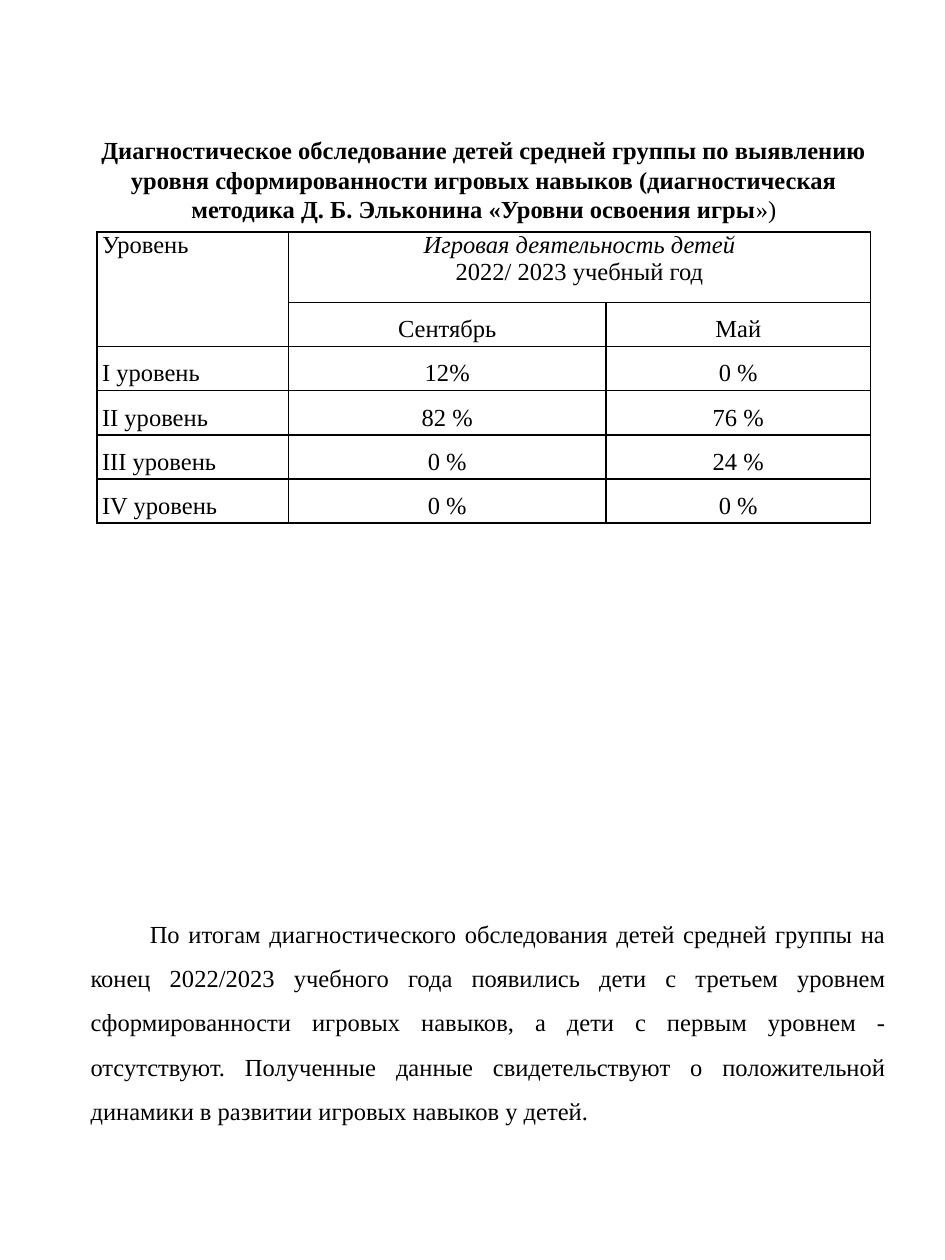
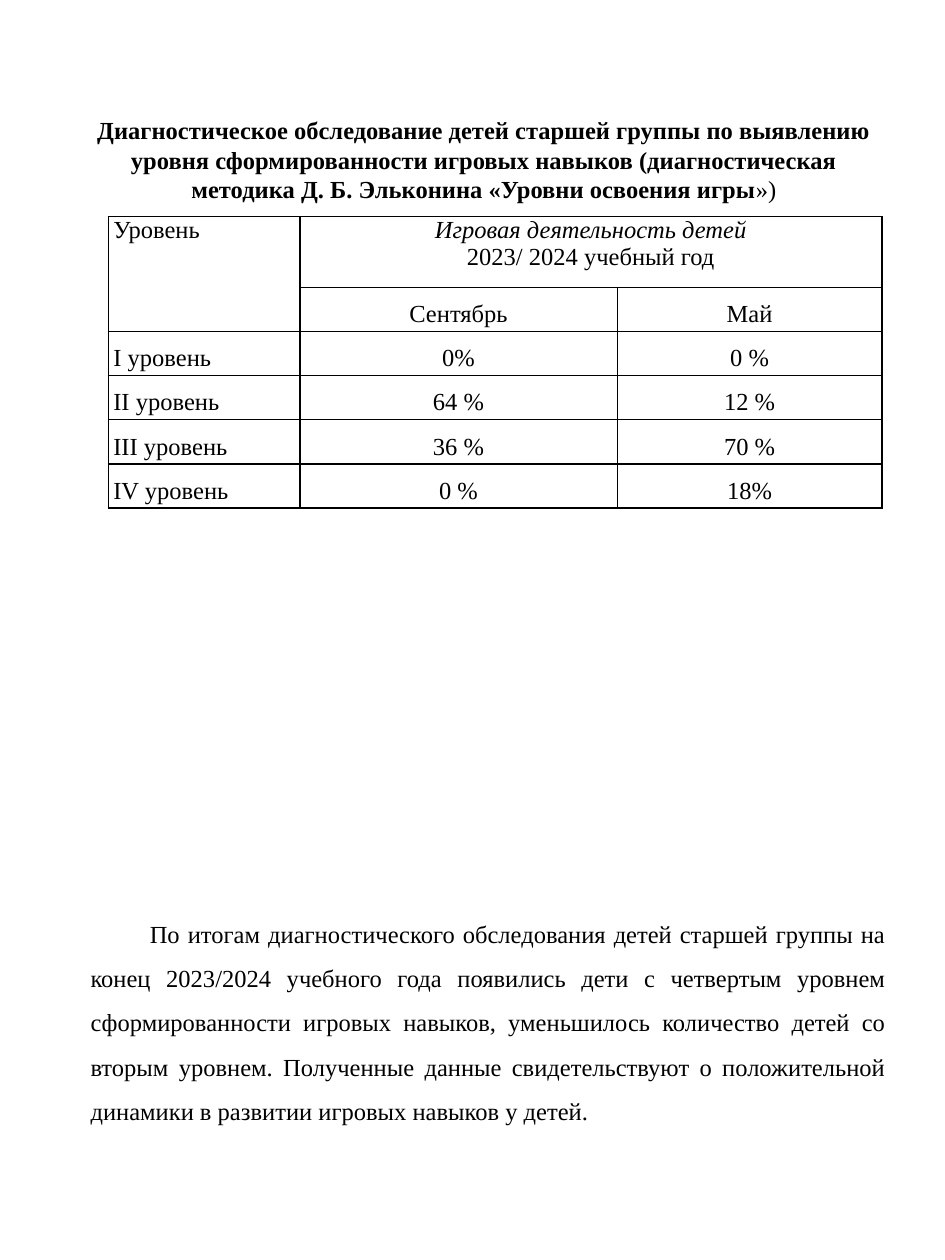
from dataclasses import dataclass

from lxml.etree import SubElement
from pptx import Presentation
from pptx.dml.color import RGBColor
from pptx.enum.text import MSO_ANCHOR as Anchor, MSO_AUTO_SIZE as AutoSize, PP_ALIGN as Align
from pptx.oxml import parse_xml
from pptx.oxml.ns import nsdecls, qn
from pptx.util import Inches, Pt


@dataclass(frozen=True)
class Theme:
    font: str = "Times New Roman"
    size: int = 14
    ink: str = "000000"
    border: int = 1
    loose: float = 1.5
    cell_inset: float = 0.04
    first_line: float = 0.47


THEME = Theme()

# Content
LEVELS = ("I уровень", "II уровень", "III уровень", "IV уровень")
MONTHS = ("Сентябрь", "Май")
TITLE = (
    "Диагностическое обследование детей {group} группы по выявлению уровня "
    "сформированности игровых навыков (диагностическая методика "
    "Д. Б. Эльконина «Уровни освоения игры"
)
SUMMARY = (
    "По итогам диагностического обследования детей {group} группы на конец "
    "{start}/{end} учебного года появились дети с {change}. Полученные данные "
    "свидетельствуют о положительной динамики в развитии игровых навыков у детей."
)
SURVEYS = [
    dict(
        group="средней", start=2022, end=2023,
        change="третьем уровнем сформированности игровых навыков, "
               "а дети с первым уровнем - отсутствуют",
        results=[("12%", "0 %"), ("82 %", "76 %"), ("0 %", "24 %"), ("0 %", "0 %")],
        title_top=1.02, table_at=(0.77, 1.84),
    ),
    dict(
        group="старшей", start=2023, end=2024,
        change="четвертым уровнем сформированности игровых навыков, "
               "уменьшилось количество детей со вторым уровнем",
        results=[("0%", "0 %"), ("64 %", "12 %"), ("36 %", "70 %"), ("0 %", "18%")],
        title_top=0.86, table_at=(0.86, 1.72),
    ),
]

# Layout, in inches
SLIDE_SIZE = (7.5, 10)
TITLE_LEFT, TITLE_SIZE = 0.55, (6.58, 0.81)
SUMMARY_BOX = (0.62, 7.13, 6.51, 1.87)
COLUMNS = (1.52, 2.52, 2.1)
HEADER_HEIGHT, ROW_HEIGHT = 0.56, 0.35


def write(paragraph, text, align=Align.LEFT, bold=False, italic=False,
          spacing=None, first_line=0):
    """Add one formatted run to a paragraph."""
    paragraph.alignment = align
    if spacing:
        paragraph.line_spacing = spacing
    if first_line:
        paragraph._p.get_or_add_pPr().set("indent", str(Inches(first_line)))
    run = paragraph.add_run()
    run.text = text
    font = run.font
    font.name, font.size = THEME.font, Pt(THEME.size)
    font.bold, font.italic = bold, italic
    font.color.rgb = RGBColor.from_string(THEME.ink)


def add_text_frame(slide, box, anchor=Anchor.TOP):
    frame = slide.shapes.add_textbox(*map(Inches, box)).text_frame
    frame.word_wrap = True
    frame.auto_size = AutoSize.SHAPE_TO_FIT_TEXT
    frame.vertical_anchor = anchor
    return frame


def style_cell(cell):
    cell.margin_left = cell.margin_right = Inches(THEME.cell_inset)
    cell.margin_top = cell.margin_bottom = 0
    cell.fill.background()
    properties = cell._tc.get_or_add_tcPr()
    for position, side in enumerate(("lnL", "lnR", "lnT", "lnB")):
        line = parse_xml(f'<a:{side} {nsdecls("a")} w="{Pt(THEME.border)}"/>')
        fill = SubElement(line, qn("a:solidFill"))
        SubElement(fill, qn("a:srgbClr")).set("val", THEME.ink)
        properties.insert(position, line)


def add_results_table(slide, survey):
    rows = [("", *MONTHS)]
    rows += [(level, *values) for level, values in zip(LEVELS, survey["results"])]
    height = HEADER_HEIGHT + ROW_HEIGHT * len(rows)
    box = (*survey["table_at"], sum(COLUMNS), height)
    table = slide.shapes.add_table(
        len(rows) + 1, len(COLUMNS), *map(Inches, box)).table
    table.first_row = table.horz_banding = False
    for column, width in zip(table.columns, COLUMNS):
        column.width = Inches(width)
    for index, row in enumerate(table.rows):
        row.height = Inches(ROW_HEIGHT if index else HEADER_HEIGHT)
    for cell in table.iter_cells():
        style_cell(cell)

    # Merged header
    level_header, year_header = table.cell(0, 0), table.cell(0, 1)
    level_header.merge(table.cell(1, 0))
    year_header.merge(table.cell(0, 2))
    write(level_header.text_frame.paragraphs[0], "Уровень")
    frame = year_header.text_frame
    write(frame.paragraphs[0], "Игровая деятельность детей",
          align=Align.CENTER, italic=True)
    write(frame.add_paragraph(), f"{survey['start']}/ {survey['end']} учебный год",
          align=Align.CENTER)

    # Months and results
    for row_index, row in enumerate(rows, start=1):
        for column_index, text in enumerate(row):
            if text:
                write(table.cell(row_index, column_index).text_frame.paragraphs[0],
                      text, spacing=THEME.loose,
                      align=Align.CENTER if column_index else Align.LEFT)


def add_survey_slide(presentation, survey):
    slide = presentation.slides.add_slide(presentation.slide_layouts[6])

    # Title
    title_box = (TITLE_LEFT, survey["title_top"], *TITLE_SIZE)
    title = add_text_frame(slide, title_box, Anchor.MIDDLE).paragraphs[0]
    write(title, TITLE.format(**survey), align=Align.CENTER, bold=True)
    write(title, "»)", align=Align.CENTER)

    add_results_table(slide, survey)

    # Summary
    write(add_text_frame(slide, SUMMARY_BOX).paragraphs[0], SUMMARY.format(**survey),
          align=Align.JUSTIFY, spacing=THEME.loose, first_line=THEME.first_line)


def main():
    presentation = Presentation()
    presentation.slide_width, presentation.slide_height = map(Inches, SLIDE_SIZE)
    for survey in SURVEYS:
        add_survey_slide(presentation, survey)
    presentation.save("out.pptx")


if __name__ == "__main__":
    main()
